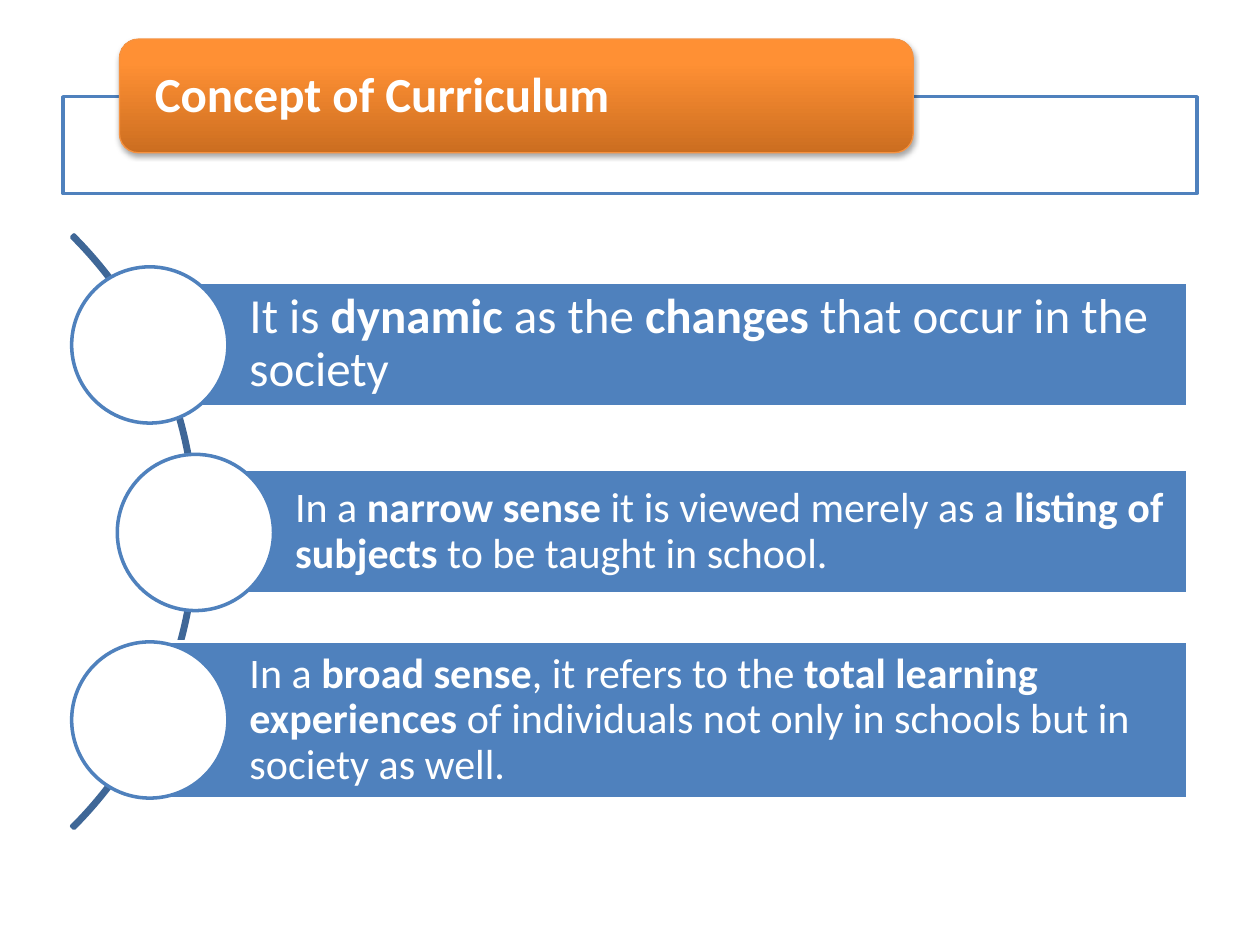
from dataclasses import dataclass

from pptx import Presentation
from pptx.dml.color import RGBColor
from pptx.enum.shapes import MSO_SHAPE
from pptx.enum.text import MSO_ANCHOR, MSO_AUTO_SIZE, PP_ALIGN
from pptx.oxml import parse_xml
from pptx.oxml.ns import nsdecls
from pptx.util import Cm, Pt


@dataclass(frozen=True)
class Theme:
    font: str = "Calibri"
    white: str = "FFFFFF"
    blue: str = "4F81BD"
    arc: str = "3F6797"
    tab_edge: str = "F69240"
    tab_dark: str = "CC6E20"
    tab_light: str = "FF9034"
    large: int = 28
    medium: int = 24


THEME = Theme()
TITLE = "Concept of Curriculum"

# Each statement alternates regular and bold wording.
# Bar left, top, height in cm, type size, side inset, wording.
STATEMENTS = [
    (3.02, 5.69, 2.51, THEME.large, 0.2,
     ["It is ", "dynamic ", "as the ", "changes ", "that occur in the society"]),
    (3.94, 9.47, 2.51, THEME.medium, 0.18,
     ["In a ", "narrow sense ", "it is viewed merely as a ",
      "listing of subjects ", "to be taught in school."]),
    (3.02, 12.93, 3.18, THEME.medium, 0.18,
     ["In a ", "broad sense", ", it refers to the ", "total learning experiences ",
      "of individuals not only in schools but in society as well."]),
]
BAR_RIGHT = 23.95
CIRCLE_SIZE = 3.15
FIRST_CIRCLE_TOP = 5.38
CIRCLE_STEP = 3.78


def color(code):
    return RGBColor.from_string(code)


def add_outlined(slide, preset, box, fill, line, width=2):
    """Add a shadowless preset shape; box is left, top, width, height in cm."""
    shape = slide.shapes.add_shape(preset, *map(Cm, box))
    shape.shadow.inherit = False
    if fill:
        shape.fill.solid()
        shape.fill.fore_color.rgb = color(fill)
    else:
        shape.fill.background()
    shape.line.color.rgb = color(line)
    shape.line.width = Pt(width)
    return shape


def write_text(frame, parts, size, insets, first_bold=False):
    """Write parts in alternating weight; insets are left, top, right, bottom in cm."""
    left, top, right, bottom = map(Cm, insets)
    frame_format = {
        "word_wrap": True,
        "auto_size": MSO_AUTO_SIZE.NONE,
        "vertical_anchor": MSO_ANCHOR.MIDDLE,
        "margin_left": left,
        "margin_top": top,
        "margin_right": right,
        "margin_bottom": bottom,
    }
    for name, value in frame_format.items():
        setattr(frame, name, value)
    paragraph = frame.paragraphs[0]
    paragraph.alignment = PP_ALIGN.LEFT
    paragraph.line_spacing = 0.9
    for index, part in enumerate(parts):
        run = paragraph.add_run()
        run.text = part
        run_format = {
            "name": THEME.font,
            "size": Pt(size),
            "bold": (index % 2 == 1) != first_bold,
        }
        for name, value in run_format.items():
            setattr(run.font, name, value)
        run.font.color.rgb = color(THEME.white)


def add_tab_shadow(tab):
    effects = tab.element.spPr.find("{*}effectLst")
    effects.append(parse_xml(
        f'<a:outerShdw {nsdecls("a")} blurRad="{Pt(3.1)}" dist="{Pt(1.8)}" '
        'dir="5400000" rotWithShape="0"><a:srgbClr val="000000">'
        '<a:alpha val="35000"/></a:srgbClr></a:outerShdw>'))


def add_heading(slide):
    add_outlined(slide, MSO_SHAPE.RECTANGLE, (1.27, 1.95, 22.86, 1.95),
                 THEME.white, THEME.blue)
    tab = add_outlined(slide, MSO_SHAPE.ROUNDED_RECTANGLE, (2.41, 0.79, 16, 2.29),
                       None, THEME.tab_edge, 0.75)
    tab.fill.gradient()
    tab.fill.gradient_angle = 90
    stops = [(0, THEME.tab_dark), (0.8, THEME.tab_light)]
    for stop, (position, shade) in zip(tab.fill.gradient_stops, stops):
        stop.position = position
        stop.color.rgb = color(shade)
    add_tab_shadow(tab)

    title = slide.shapes.title
    place = {"left": 2.51, "top": 0.91, "width": 15.77, "height": 2.08}
    for name, value in place.items():
        setattr(title, name, Cm(value))
    write_text(title.text_frame, [TITLE], THEME.large, (0.61, 0, 0.61, 0),
               first_bold=True)
    tab.element.addnext(title.element)


def add_arc(slide):
    arc = add_outlined(slide, MSO_SHAPE.BLOCK_ARC, (-12.95, 2.26, 16.92, 16.92),
                       None, THEME.arc)
    for index, value in enumerate((189, 27, 0.004)):
        arc.adjustments[index] = value


def add_statement(slide, index, left, top, height, size, inset, parts):
    bar = add_outlined(slide, MSO_SHAPE.RECTANGLE,
                       (left, top, BAR_RIGHT - left, height),
                       THEME.blue, THEME.white)
    write_text(bar.text_frame, parts, size, (2.01, inset, inset, inset))
    circle_top = FIRST_CIRCLE_TOP + index * CIRCLE_STEP
    add_outlined(slide, MSO_SHAPE.OVAL,
                 (left - CIRCLE_SIZE / 2, circle_top, CIRCLE_SIZE, CIRCLE_SIZE),
                 THEME.white, THEME.blue)


def main():
    deck = Presentation()
    deck.slide_width, deck.slide_height = Cm(25.4), Cm(19.05)
    slide = deck.slides.add_slide(deck.slide_layouts[5])
    add_heading(slide)
    add_arc(slide)
    for index, statement in enumerate(STATEMENTS):
        add_statement(slide, index, *statement)
    deck.save("out.pptx")


if __name__ == "__main__":
    main()
